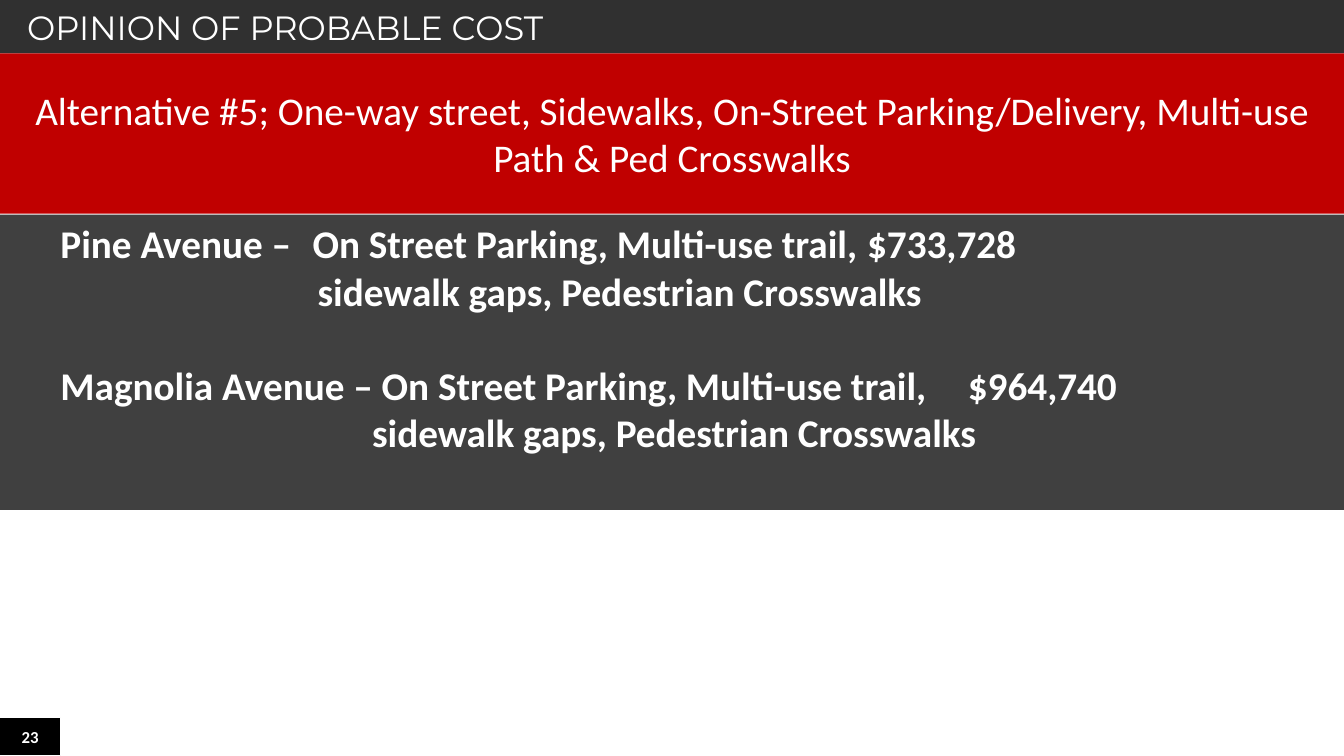
from lxml.etree import SubElement
from pptx import Presentation
from pptx.dml.color import RGBColor
from pptx.enum.shapes import MSO_SHAPE
from pptx.enum.text import MSO_ANCHOR as Anchor, MSO_AUTO_SIZE as AutoSize, PP_ALIGN as Align
from pptx.oxml.ns import qn
from pptx.util import Inches, Pt

TITLE = "OPINION OF PROBABLE COST"
ALTERNATIVE = ("Alternative #5; One-way street, Sidewalks, On-Street Parking/Delivery, "
               "Multi-use Path & Ped Crosswalks")
PAGE = "23"
COSTS = [
    {"text": "Pine Avenue –\tOn Street Parking, Multi-use trail,\t$733,728",
     "tabs": (2.99, 11), "gap": 0},
    {"text": "sidewalk gaps, Pedestrian Crosswalks", "indent": 2.55},
    {"text": "Magnolia Avenue – On Street Parking, Multi-use trail,\t$964,740",
     "tabs": (10,), "gap": 34},
    {"text": "sidewalk gaps, Pedestrian Crosswalks", "indent": 3.09},
]

WHITE = RGBColor(0xFF, 0xFF, 0xFF)
BLACK = RGBColor(0, 0, 0)
RED = RGBColor(0xC0, 0, 0)
CHARCOAL = RGBColor(0x30, 0x30, 0x30)
GRAY = RGBColor(0x40, 0x40, 0x40)
WIDTH, HEIGHT = 13.33, 7.5


def place(band, left, top, width, height, fill, inset=0.1, anchor=Anchor.MIDDLE):
    """Position and fill a band and set up its text area."""
    band.left, band.top = Inches(left), Inches(top)
    band.width, band.height = Inches(width), Inches(height)
    band.fill.solid()
    band.fill.fore_color.rgb = fill
    frame = band.text_frame
    frame.word_wrap = True
    frame.auto_size = AutoSize.NONE
    frame.vertical_anchor = anchor
    frame.margin_left = Inches(inset)
    return frame


def write(paragraph, text, size=28, font="Calibri", bold=False, align=Align.LEFT,
          gap=0, indent=0, tabs=()):
    """Put formatted text into a paragraph."""
    paragraph.alignment = align
    paragraph.space_before = Pt(gap)
    paragraph.line_spacing = 1.0
    run = paragraph.add_run()
    run.text = text
    run.font.size = Pt(size)
    run.font.name = font
    run.font.bold = bold
    run.font.color.rgb = WHITE
    properties = paragraph._p.get_or_add_pPr()
    properties.set("marL", str(Inches(indent)))
    properties.set("indent", "0")
    SubElement(properties, qn("a:buNone"))
    if tabs:
        stops = SubElement(properties, qn("a:tabLst"))
        for position in tabs:
            SubElement(stops, qn("a:tab"), pos=str(Inches(position)), algn="l")


def add_band(slide, left, top, width, height, fill):
    """Add a plain rectangle and return it with its text area."""
    band = slide.shapes.add_shape(MSO_SHAPE.RECTANGLE, 0, 0, 0, 0)
    band.shadow.inherit = False
    band.line.fill.background()
    return band, place(band, left, top, width, height, fill)


def main():
    """Build the cost slide."""
    deck = Presentation()
    deck.slide_width, deck.slide_height = Inches(WIDTH), Inches(HEIGHT)
    slide = deck.slides.add_slide(deck.slide_layouts[1])

    heading = place(slide.shapes.title, 0, 0, WIDTH, 0.53, CHARCOAL, inset=0.27)
    write(heading.paragraphs[0], TITLE, size=24, font="Montserrat")

    _, alternative = add_band(slide, 0, 0.53, WIDTH, 1.59, RED)
    write(alternative.paragraphs[0], ALTERNATIVE, align=Align.CENTER)

    costs = place(slide.placeholders[1], 0, 2.13, WIDTH, 2.93, GRAY,
                  inset=0.6, anchor=Anchor.TOP)
    for index, cost in enumerate(COSTS):
        paragraph = costs.add_paragraph() if index else costs.paragraphs[0]
        write(paragraph, bold=True, **cost)

    page_box, page = add_band(slide, 0, 7.12, 0.6, 0.38, BLACK)
    page_box.line.color.rgb = WHITE
    page_box.line.width = Pt(0.75)
    write(page.paragraphs[0], PAGE, size=12, bold=True, align=Align.CENTER)

    deck.save("out.pptx")


if __name__ == "__main__":
    main()
